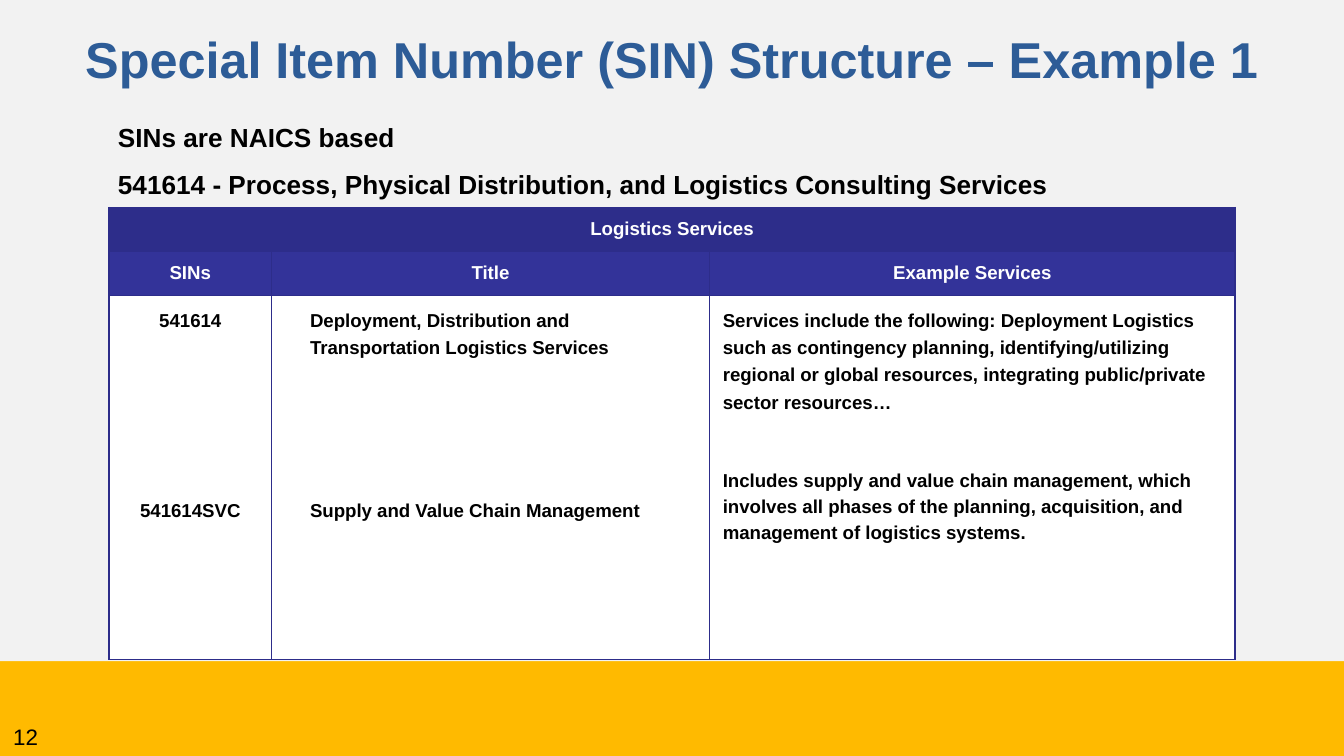
from lxml import etree
from pptx import Presentation
from pptx import util as u
from pptx.dml.color import RGBColor
from pptx.enum import shapes, text
from pptx.oxml import ns

GOLD = RGBColor(0xFF, 0xBA, 0x00)
PALE = RGBColor(0xF2, 0xF2, 0xF2)
BLUE = RGBColor(0x2D, 0x5C, 0x97)
NAVY = RGBColor(0x2D, 0x2D, 0x8A)
INDIGO = RGBColor(0x33, 0x33, 0x99)
WHITE = RGBColor(0xFF, 0xFF, 0xFF)
BLACK = RGBColor(0x00, 0x00, 0x00)

LEFT, CENTER = text.PP_ALIGN.LEFT, text.PP_ALIGN.CENTER
TOP, MIDDLE = text.MSO_ANCHOR.TOP, text.MSO_ANCHOR.MIDDLE

HEADINGS = ["SINs", "Title", "Example Services"]
SERVICES = [
    (["541614", "541614SVC"], CENTER, 0, 87, 1.3),
    (["Deployment, Distribution and Transportation Logistics Services",
      "Supply and Value Chain Management"], LEFT, 0.48, 72.5, 1.3),
    (["Services include the following: Deployment Logistics such as contingency "
      "planning, identifying/utilizing regional or global resources, integrating "
      "public/private sector resources…",
      "Includes supply and value chain management, which involves all phases of the "
      "planning, acquisition, and management of logistics systems."], LEFT, 0, 28, 1.25),
]


class SlideBuilder:
    font = "Arial"

    def __init__(self, slide):
        self.slide = slide

    def band(self, top, height, color):
        band = self.slide.shapes.add_shape(
            shapes.MSO_SHAPE.RECTANGLE, 0, u.Cm(top), u.Cm(25.4), u.Cm(height))
        band.shadow.inherit = False
        band.fill.solid()
        band.fill.fore_color.rgb = color
        band.line.fill.background()

    def fill_text(self, frame, lines, size, color, bold=True, align=LEFT,
                  spacing=1.0, gap=0, indent=0):
        frame.word_wrap = True
        for index, line in enumerate(lines):
            para = frame.add_paragraph() if index else frame.paragraphs[0]
            para.text = line
            para.alignment = align
            para.line_spacing = spacing
            if index:
                para.space_before = u.Pt(gap)
            if indent:
                para._p.get_or_add_pPr().set("marL", str(u.Cm(indent)))
            for span in para.runs:
                span.font.name = self.font
                span.font.size = u.Pt(size)
                span.font.bold = bold
                span.font.color.rgb = color

    def text_box(self, left, top, width, height, lines, size, color, anchor=TOP, **style):
        box = self.slide.shapes.add_textbox(u.Cm(left), u.Cm(top), u.Cm(width), u.Cm(height))
        box.text_frame.vertical_anchor = anchor
        self.fill_text(box.text_frame, lines, size, color, **style)

    def table(self, left, top, widths, heights):
        frame = self.slide.shapes.add_table(
            len(heights), len(widths), u.Cm(left), u.Cm(top),
            u.Cm(sum(widths)), u.Cm(sum(heights)))
        table = frame.table
        table.first_row = table.horz_banding = False
        for column, width in zip(table.columns, widths):
            column.width = u.Cm(width)
        for row, height in zip(table.rows, heights):
            row.height = u.Cm(height)
        return table

    def cell(self, cell, lines, fill, color, anchor=MIDDLE, **style):
        self.borders(cell)
        cell.fill.solid()
        cell.fill.fore_color.rgb = fill
        cell.vertical_anchor = anchor
        cell.margin_left = cell.margin_right = u.Cm(0.25)
        cell.margin_top = cell.margin_bottom = u.Cm(0.18)
        self.fill_text(cell.text_frame, lines, 10, color, **style)

    def borders(self, cell):
        properties = cell._tc.get_or_add_tcPr()
        for side in ("lnL", "lnR", "lnT", "lnB"):
            line = etree.SubElement(properties, ns.qn(f"a:{side}"), w=str(u.Pt(0.75)))
            fill = etree.SubElement(line, ns.qn("a:solidFill"))
            etree.SubElement(fill, ns.qn("a:srgbClr"), val=str(NAVY))


def main():
    deck = Presentation()
    deck.slide_width, deck.slide_height = u.Cm(25.4), u.Cm(14.29)
    page = SlideBuilder(deck.slides.add_slide(deck.slide_layouts[6]))

    page.band(12.5, 1.79, GOLD)
    page.band(0, 12.5, PALE)
    page.text_box(1.68, 2.08, 23.14, 1.75,
                  ["SINs are NAICS based",
                   "541614 - Process, Physical Distribution, and Logistics Consulting Services"],
                  14, BLACK, spacing=1.15, gap=6, indent=0.3)
    page.text_box(0, 0.53, 25.4, 0.86, ["Special Item Number (SIN) Structure – Example 1"],
                  27, BLUE, align=CENTER, spacing=0.9)
    page.text_box(0, 13.54, 5.92, 0.75, ["12"], 12, BLACK, anchor=MIDDLE, bold=False)

    table = page.table(2.06, 3.92, [3.07, 8.28, 9.93], [0.83, 0.83, 6.88])
    table.cell(0, 0).merge(table.cell(0, 2))
    for column, heading in enumerate(HEADINGS):
        banner = [] if column else ["Logistics Services"]
        page.cell(table.cell(0, column), banner, NAVY, WHITE, align=CENTER)
        page.cell(table.cell(1, column), [heading], INDIGO, WHITE, align=CENTER)
    for column, (lines, align, indent, gap, spacing) in enumerate(SERVICES):
        page.cell(table.cell(2, column), lines, WHITE, BLACK, anchor=TOP,
                  align=align, indent=indent, gap=gap, spacing=spacing)
        table.cell(2, column).text_frame.paragraphs[0].line_spacing = 1.3

    deck.save("out.pptx")


if __name__ == "__main__":
    main()
